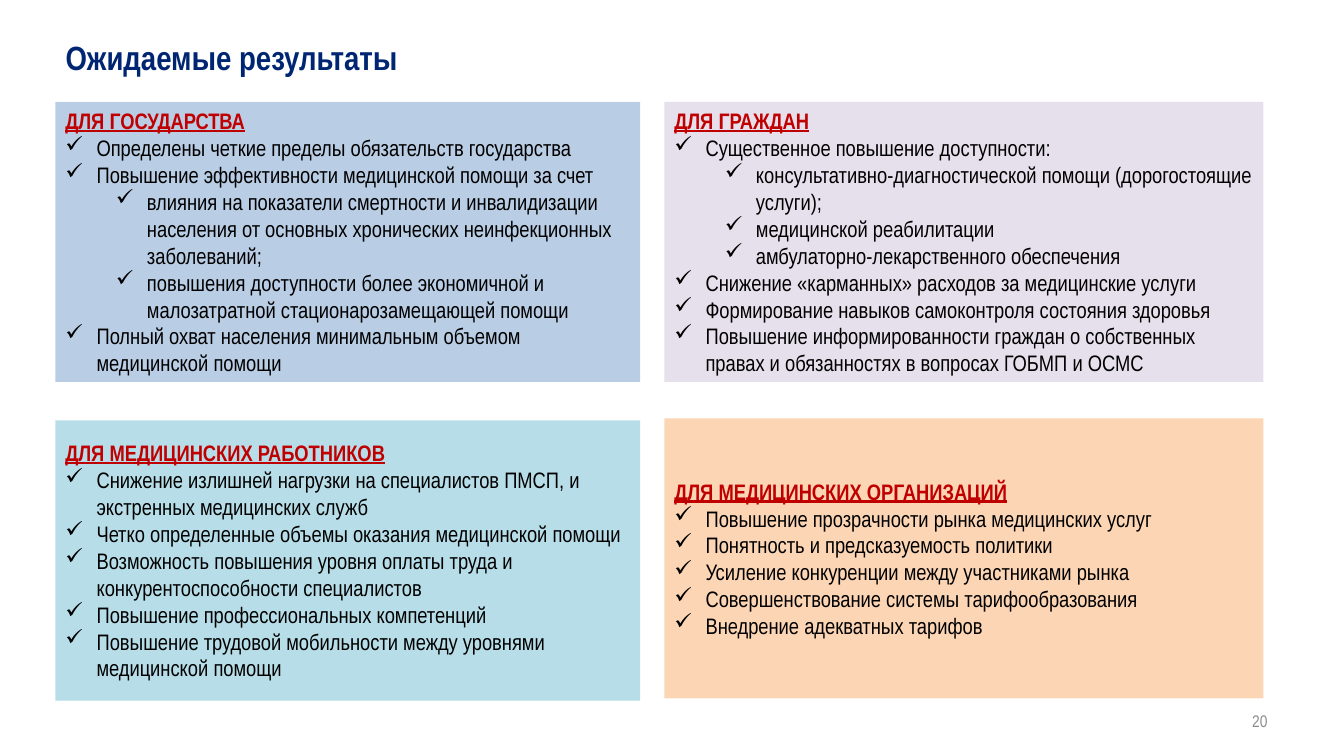
from lxml import etree
from pptx import Presentation
from pptx.dml.color import RGBColor
from pptx.enum.shapes import MSO_SHAPE
from pptx.enum.text import MSO_ANCHOR, PP_ALIGN
from pptx.oxml.ns import qn
from pptx.util import Inches, Pt

RECT = MSO_SHAPE.RECTANGLE
MIDDLE = MSO_ANCHOR.MIDDLE
LEFT, RIGHT = PP_ALIGN.LEFT, PP_ALIGN.RIGHT
FONT = "Arial Narrow"


def style(p, size, color, bold=False, underline=False, align=LEFT):
    p.alignment = align
    p.font.name = FONT
    p.font.size = Pt(size)
    p.font.bold = bold
    p.font.underline = underline
    p.font.color.rgb = RGBColor.from_string(color)


def add_check(p, level):
    p.level = level
    pPr = p._p.get_or_add_pPr()
    pPr.set("marL", str(Inches(0.31 + 0.5 * level)))
    pPr.set("indent", str(Inches(-0.31)))
    bullet = etree.Element(qn("a:buChar"), char="✓")
    # The bullet comes before the default run properties
    pPr.insert(0, bullet)


# Left, top, width, fill, heading, list of (level, text)
panels = [
    (0.55, 1.01, 5.8, "B9CDE5", "ДЛЯ ГОСУДАРСТВА", [
        (0, "Определены четкие пределы обязательств государства"),
        (0, "Повышение эффективности медицинской помощи за счет"),
        (1, "влияния на показатели смертности и инвалидизации населения "
            "от основных хронических неинфекционных заболеваний;"),
        (1, "повышения доступности более экономичной и малозатратной "
            "стационарозамещающей помощи"),
        (0, "Полный охват населения минимальным объемом медицинской помощи"),
    ]),
    (6.59, 1.01, 5.94, "E6E0EC", "ДЛЯ ГРАЖДАН", [
        (0, "Существенное повышение доступности:"),
        (1, "консультативно-диагностической помощи (дорогостоящие услуги);"),
        (1, "медицинской реабилитации"),
        (1, "амбулаторно-лекарственного обеспечения"),
        (0, "Снижение «карманных» расходов за медицинские услуги"),
        (0, "Формирование навыков самоконтроля состояния здоровья"),
        (0, "Повышение информированности граждан о собственных правах "
            "и обязанностях в вопросах ГОБМП и ОСМС"),
    ]),
    (0.55, 4.17, 5.8, "B7DEE8", "ДЛЯ МЕДИЦИНСКИХ РАБОТНИКОВ", [
        (0, "Снижение излишней нагрузки на специалистов ПМСП, "
            "и экстренных медицинских служб"),
        (0, "Четко определенные объемы оказания медицинской помощи"),
        (0, "Возможность повышения уровня оплаты труда "
            "и конкурентоспособности специалистов"),
        (0, "Повышение профессиональных компетенций"),
        (0, "Повышение трудовой мобильности между уровнями медицинской помощи"),
    ]),
    (6.59, 4.15, 5.94, "FCD5B5", "ДЛЯ МЕДИЦИНСКИХ ОРГАНИЗАЦИЙ", [
        (0, "Повышение прозрачности рынка медицинских услуг"),
        (0, "Понятность и предсказуемость политики"),
        (0, "Усиление конкуренции между участниками рынка"),
        (0, "Совершенствование системы тарифообразования"),
        (0, "Внедрение адекватных тарифов"),
    ]),
]

prs = Presentation()
prs.slide_width, prs.slide_height = Inches(13.33), Inches(7.5)
s = prs.slides.add_slide(prs.slide_layouts[5])

# Title
title = s.shapes.title
title.left, title.top = Inches(0.55), Inches(0.26)
title.width, title.height = Inches(12.56), Inches(0.62)
title.text_frame.text = "Ожидаемые результаты"
title.text_frame.vertical_anchor = MIDDLE
style(title.text_frame.paragraphs[0], 24, "002673", bold=True)

# Page number
number = s.shapes.add_textbox(Inches(9.56), Inches(6.95), Inches(3.11), Inches(0.4))
tf = number.text_frame
tf.word_wrap = True
tf.vertical_anchor = MIDDLE
tf.text = "20"
style(tf.paragraphs[0], 12, "8C8C8C", align=RIGHT)

# Four result panels
for left, top, width, fill, heading, items in panels:
    sp = s.shapes.add_shape(RECT, Inches(left), Inches(top), Inches(width), Inches(2.78))
    sp.shadow.inherit = False
    sp.fill.solid()
    sp.fill.fore_color.rgb = RGBColor.from_string(fill)
    sp.line.fill.background()
    tf = sp.text_frame
    tf.word_wrap = True
    tf.vertical_anchor = MIDDLE
    tf.text = heading
    style(tf.paragraphs[0], 16, "C00000", bold=True, underline=True)
    for level, text in items:
        p = tf.add_paragraph()
        p.text = text
        style(p, 16, "000000")
        add_check(p, level)

prs.save("out.pptx")
